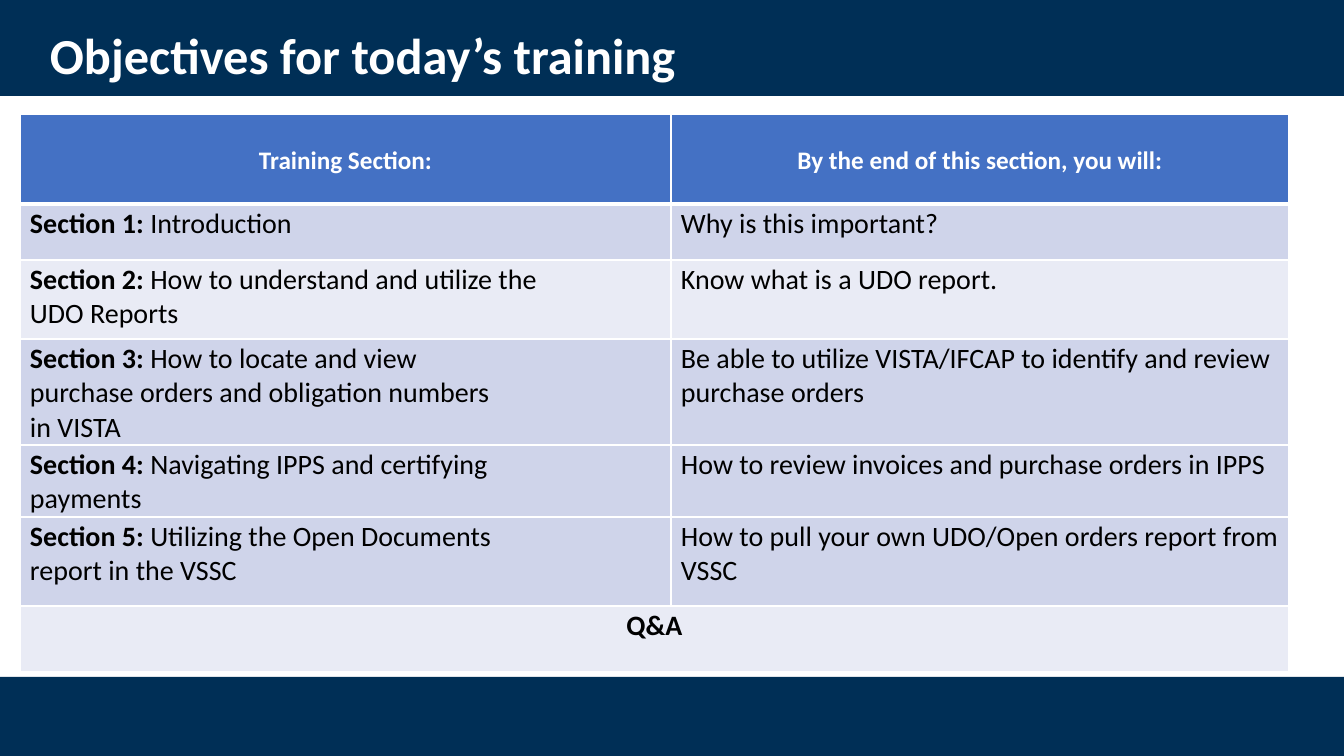
import dataclasses

import lxml.etree
import pptx
import pptx.dml.color
import pptx.enum.shapes
import pptx.enum.text
import pptx.oxml.ns
import pptx.presentation
import pptx.slide
import pptx.table
import pptx.text.text
import pptx.util

EMU_PER_PX = 914400 / 100.8
FONT = "Calibri"
COLOURS = {
    "navy": "002F56",
    "header": "4471C4",
    "band": "CFD4EA",
    "pale": "E9EBF5",
    "white": "FFFFFF",
    "black": "000000",
}
COLUMN_WIDTHS = (651, 618)
HEADINGS = ("Training Section:", "By the end of this section, you will:")
HEADER_HEIGHT = 90
CLOSING_HEIGHT = 66
THIN, THICK = 1, 3


@dataclasses.dataclass(frozen=True)
class Band:
    top: int
    height: int


@dataclasses.dataclass(frozen=True)
class Section:
    label: str
    topic: str
    outcome: str
    height: int
    fill: str = "band"
    topic_inset: int = 120


BANDS = (Band(0, 96), Band(677, 79))
SECTIONS = (
    Section("Section 1:", "Introduction", "Why is this important?", 56),
    Section("Section 2:", "How to understand and utilize the UDO Reports",
            "Know what is a UDO report.", 79, fill="pale"),
    Section("Section 3:", "How to locate and view purchase orders and obligation numbers in VISTA",
            "Be able to utilize VISTA/IFCAP to identify and review purchase orders", 106,
            topic_inset=170),
    Section("Section 4:", "Navigating IPPS and certifying payments",
            "How to review invoices and purchase orders in IPPS", 72),
    Section("Section 5:", "Utilizing the Open Documents report in the VSSC",
            "How to pull your own UDO/Open orders report from VSSC", 89),
)


def px(length: int) -> pptx.util.Emu:
    return pptx.util.Emu(round(length * EMU_PER_PX))


def colour(name: str) -> pptx.dml.color.RGBColor:
    return pptx.dml.color.RGBColor.from_string(COLOURS[name])


def style(paragraph: pptx.text.text._Paragraph, size: int, ink: str) -> None:
    paragraph.font.name = FONT
    paragraph.font.size = pptx.util.Pt(size)
    paragraph.font.color.rgb = colour(ink)


def draw_band(slide: pptx.slide.Slide, band: Band) -> None:
    bar = slide.shapes.add_shape(pptx.enum.shapes.MSO_SHAPE.RECTANGLE,
                                 0, px(band.top), px(1344), px(band.height))
    bar.shadow.inherit = False
    bar.fill.solid()
    bar.fill.fore_color.rgb = colour("navy")
    bar.line.fill.background()


def draw_title(slide: pptx.slide.Slide) -> None:
    title = slide.shapes.add_textbox(px(40), px(21), px(1159), px(75)).text_frame
    title.word_wrap = True
    title.vertical_anchor = pptx.enum.text.MSO_ANCHOR.MIDDLE
    heading = title.paragraphs[0]
    heading.text = "Objectives for today’s training"
    heading.line_spacing = 0.9
    style(heading, 36, "white")
    heading.font.bold = True


def set_borders(cell: pptx.table._Cell, top: int, bottom: int) -> None:
    properties = cell._tc.get_or_add_tcPr()
    widths = {"lnL": THIN, "lnR": THIN, "lnT": top, "lnB": bottom}
    for position, (edge, width) in enumerate(widths.items()):
        line = lxml.etree.Element(pptx.oxml.ns.qn(f"a:{edge}"), w=str(pptx.util.Pt(width)))
        fill = lxml.etree.SubElement(line, pptx.oxml.ns.qn("a:solidFill"))
        lxml.etree.SubElement(fill, pptx.oxml.ns.qn("a:srgbClr"), val=COLOURS["white"])
        properties.insert(position, line)


def fill_cell(cell: pptx.table._Cell, fill: str, bold_text: str, plain_text: str = "",
              size: int = 20, ink: str = "black", centred: bool = False,
              right_inset: int = 0, top: int = THIN, bottom: int = THIN) -> None:
    cell.margin_left = px(0 if centred else 10)
    cell.margin_right = px(right_inset)
    cell.margin_top = px(3)
    cell.margin_bottom = 0
    cell.fill.solid()
    cell.fill.fore_color.rgb = colour(fill)
    set_borders(cell, top, bottom)
    paragraph = cell.text_frame.paragraphs[0]
    if centred:
        paragraph.alignment = pptx.enum.text.PP_ALIGN.CENTER
    style(paragraph, size, ink)
    for text, bold in ((bold_text, True), (plain_text, False)):
        if text:
            run = paragraph.add_run()
            run.text = text
            run.font.bold = bold


def draw_agenda(slide: pptx.slide.Slide) -> None:
    heights = [HEADER_HEIGHT, *(section.height for section in SECTIONS), CLOSING_HEIGHT]
    agenda = slide.shapes.add_table(len(heights), len(COLUMN_WIDTHS), px(20), px(114),
                                    px(sum(COLUMN_WIDTHS)), px(sum(heights))).table
    agenda.first_row = False
    agenda.horz_banding = False
    for column, width in zip(agenda.columns, COLUMN_WIDTHS):
        column.width = px(width)
    for row, height in zip(agenda.rows, heights):
        row.height = px(height)

    for column, heading in enumerate(HEADINGS):
        cell = agenda.cell(0, column)
        fill_cell(cell, "header", heading, size=18, ink="white", centred=True, bottom=THICK)
        cell.vertical_anchor = pptx.enum.text.MSO_ANCHOR.MIDDLE

    for row, section in enumerate(SECTIONS, start=1):
        top = THICK if row == 1 else THIN
        fill_cell(agenda.cell(row, 0), section.fill, f"{section.label} ", section.topic,
                  right_inset=section.topic_inset, top=top)
        fill_cell(agenda.cell(row, 1), section.fill, "", section.outcome, top=top)

    closing = agenda.cell(len(heights) - 1, 0)
    closing.merge(agenda.cell(len(heights) - 1, 1))
    fill_cell(closing, "pale", "Q&A", centred=True)


def main() -> None:
    deck = pptx.Presentation()
    deck.slide_width, deck.slide_height = px(1344), px(756)
    slide = deck.slides.add_slide(deck.slide_layouts[6])
    for band in BANDS:
        draw_band(slide, band)
    draw_title(slide)
    draw_agenda(slide)
    deck.save("out.pptx")


if __name__ == "__main__":
    main()
